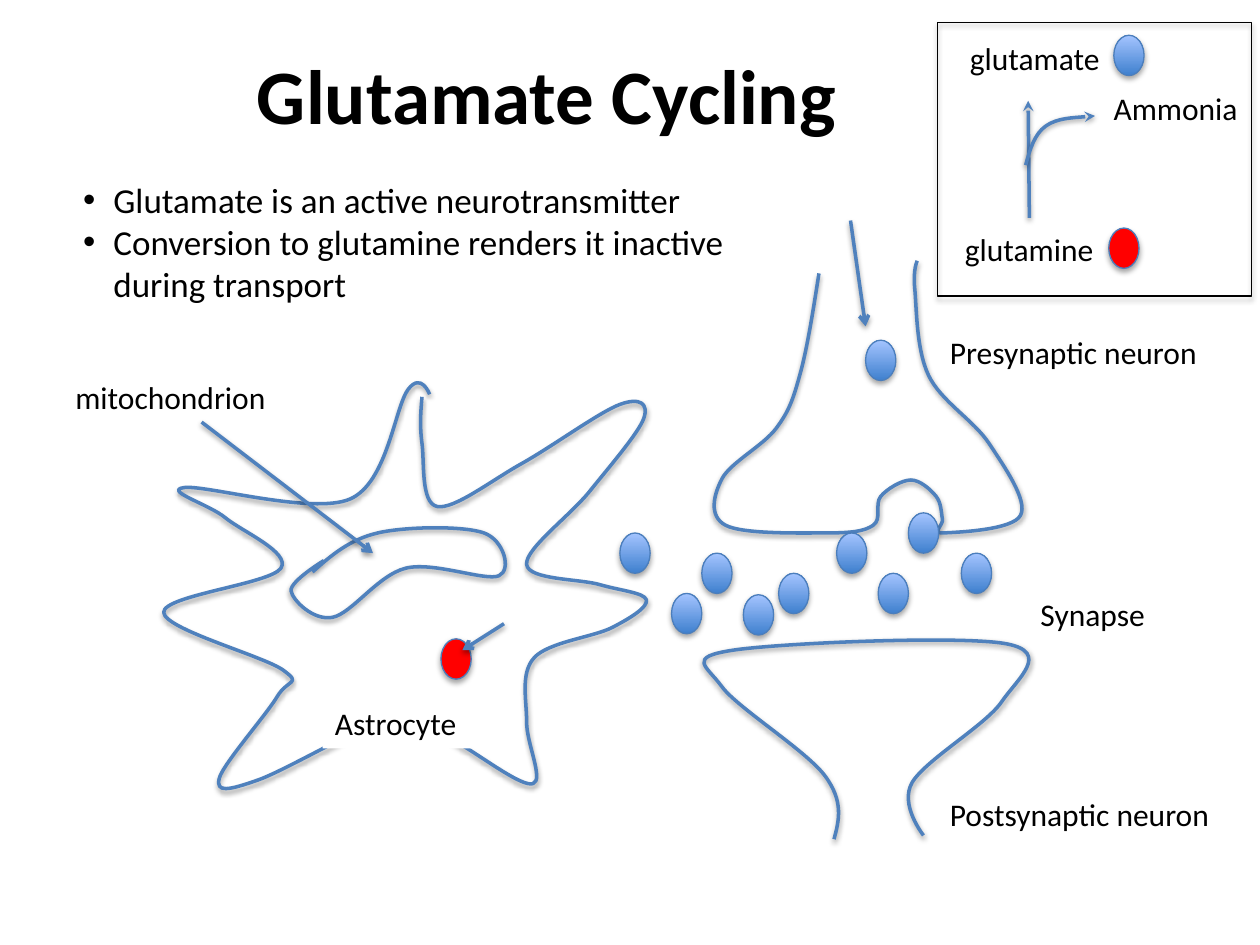
from lxml import etree
from pptx import Presentation
from pptx.dml.color import RGBColor
from pptx.enum.shapes import MSO_CONNECTOR as LINE, MSO_SHAPE as SHAPE
from pptx.enum.text import MSO_ANCHOR as ANCHOR, MSO_AUTO_SIZE as FIT, PP_ALIGN as ALIGN
from pptx.oxml.ns import qn
from pptx.util import Emu, Inches, Pt

# ---- Content ----
TITLE = "Glutamate Cycling"
BULLETS = [
    "Glutamate is an active neurotransmitter",
    "Conversion to glutamine renders it inactive during transport",
]
FONT, BLACK, OUTLINE, CELL_EDGE, RED = "Calibri", "000000", "4F81BD", "4B7EBC", "FF0000"
BLUES = ("3F80CE", "A4C4FF")
CELL_W, CELL_H, LABEL_H = 0.24, 0.32, 0.4

# Knots that each smooth outline passes through, in inches
ASTROCYTE = [
    (3.35, 3.15), (3.35, 3.52), (3.47, 4.02), (4.14, 3.68), (4.92, 3.21), (5.11, 3.32),
    (4.68, 3.9), (4.18, 4.48), (4.76, 4.64), (5.13, 4.76), (4.86, 4.98), (4.24, 5.22),
    (4.18, 5.73), (4.23, 6.22), (3.64, 5.9), (3.21, 5.66), (2.05, 6.19), (1.74, 6.18),
    (2.2, 5.53), (2.25, 5.32), (1.3, 4.86), (2.23, 4.51), (1.79, 4.11), (1.46, 3.87),
    (2.78, 3.96), (3.24, 3.09), (3.41, 3.13),
]
PRESYNAPTIC = [
    (6.5, 2.17), (6.35, 2.97), (6.16, 3.4), (5.73, 3.8), (5.76, 4.17), (6.56, 4.23),
    (6.93, 4.17), (6.99, 3.94), (7.23, 3.81), (7.43, 3.94), (7.48, 4.12), (7.49, 4.23),
    (8.1, 4.09), (7.85, 3.52), (7.37, 2.98), (7.26, 2.29), (7.28, 2.07),
]
POSTSYNAPTIC = [
    (6.62, 6.66), (6.55, 6.16), (5.73, 5.45), (5.82, 5.16), (7.99, 5.11),
    (7.95, 5.57), (7.24, 6.21), (7.33, 6.63),
]
MITOCHONDRION = [
    (2.48, 4.54), (3, 4.23), (3.84, 4.23), (3.96, 4.57), (3.22, 4.51),
    (2.64, 4.9), (2.31, 4.69), (2.57, 4.45),
]
AMMONIA_BRANCH = [(8.14, 1.31), (8.3, 1), (8.69, 0.92)]

# Left and top of each glutamate
GLUTAMATES = [
    (5.57, 4.39), (7.21, 4.07), (5.9, 4.72), (5.33, 4.71), (4.92, 4.23),
    (7.63, 4.39), (6.64, 4.23), (6.18, 4.55), (6.97, 4.55), (6.87, 2.7),
]
# Text, left, top, width
LABELS = [
    ("Synapse", 8.16, 4.67, 1.04),
    ("mitochondrion", 0.5, 2.95, 1.73),
    ("Presynaptic neuron", 7.44, 2.59, 2.18),
    ("Postsynaptic neuron", 7.44, 6.26, 2.28),
]
LEGEND_LABELS = [
    ("glutamate", 7.6, 0.26, 1.24),
    ("glutamine", 7.56, 1.78, 1.23),
    ("Ammonia", 8.74, 0.66, 1.2),
]
ARROWS = [((1.6, 3.35), (2.96, 4.39)), ((6.75, 1.75), (6.87, 2.59)), ((4, 4.95), (3.67, 5.16))]


# ---- Helpers ----
def rgb(value):
    return RGBColor.from_string(value)


def box(*lengths):
    return [Inches(v) for v in lengths]


def add_run(p, text, size, bold=False):
    r = p.add_run()
    r.text = text
    r.font.name, r.font.size, r.font.bold = FONT, Pt(size), bold
    r.font.color.rgb = rgb(BLACK)


def draw_line(sp, color, width, head=None):
    sp.line.color.rgb, sp.line.width = rgb(color), Pt(width)
    if head:
        etree.SubElement(sp.element.spPr.find(qn("a:ln")), qn("a:tailEnd"), type=head)


def add_shadow(sp, alpha, dist):
    effects = etree.SubElement(sp.element.spPr, qn("a:effectLst"))
    shadow = etree.SubElement(effects, qn("a:outerShdw"), blurRad=str(Pt(3.1)),
                              dist=str(Pt(dist)), dir="5400000", rotWithShape="0")
    color = etree.SubElement(shadow, qn("a:srgbClr"), val=BLACK)
    etree.SubElement(color, qn("a:alpha"), val=str(alpha * 1000))


def add_label(shapes, text, x, y, w, fill=None):
    sp = shapes.add_textbox(*box(x, y, w, LABEL_H))
    if fill:
        sp.fill.solid()
        sp.fill.fore_color.rgb = rgb(fill)
    sp.text_frame.word_wrap = False
    add_run(sp.text_frame.paragraphs[0], text, 18)


def add_cell(shapes, x, y, fill=None):
    sp = shapes.add_shape(SHAPE.OVAL, *box(x, y, CELL_W, CELL_H))
    if fill:
        sp.fill.solid()
        sp.fill.fore_color.rgb = rgb(fill)
    else:
        sp.fill.gradient()
        sp.fill.gradient_angle = 90
        for stop, color in zip(sp.fill.gradient_stops, BLUES):
            stop.color.rgb = rgb(color)
    draw_line(sp, CELL_EDGE, 0.75)
    add_shadow(sp, 35, 1.8)


def add_arrow(shapes, start, end, head="arrow"):
    sp = shapes.add_connector(LINE.STRAIGHT, *box(*start, *end))
    draw_line(sp, OUTLINE, 2, head)
    add_shadow(sp, 38, 1.6)


def spline(knots):
    """Bezier points after the first knot; tangents follow the neighbouring knots."""
    points, last = [], len(knots) - 1

    def handle(i, sign):
        return tuple(k + sign * (b - a) / 6
                     for a, k, b in zip(knots[i - 1], knots[i], knots[i + 1]))

    for i in range(last):
        c2 = handle(i + 1, -1) if i + 1 < last else knots[last]
        c1 = handle(i, 1) if i else tuple((a + b) / 2 for a, b in zip(knots[0], c2))
        points += [c1, c2, knots[i + 1]]
    return points


def add_curve(shapes, knots, head=None):
    builder = shapes.build_freeform(*box(*knots[0]), scale=1.0)
    builder.add_line_segments([box(*pt) for pt in spline(knots)], close=False)
    sp = builder.convert_to_shape(Emu(0), Emu(0))
    # Turn every three points into one cubic segment
    outline = sp.element.spPr.find(".//" + qn("a:path"))
    segments = outline.findall(qn("a:lnTo"))
    for i in range(0, len(segments), 3):
        cubic = etree.SubElement(outline, qn("a:cubicBezTo"))
        for segment in segments[i:i + 3]:
            cubic.append(segment[0])
            outline.remove(segment)
    sp.fill.background()
    draw_line(sp, OUTLINE, 2, head)
    add_shadow(sp, 38, 1.6)


def place(sp, x, y, w, h):
    sp.left, sp.top, sp.width, sp.height = box(x, y, w, h)
    sp.text_frame.auto_size = FIT.NONE
    return sp.text_frame


def main():
    prs = Presentation()
    prs.slide_width, prs.slide_height = box(10, 7.5)
    s = prs.slides.add_slide(prs.slide_layouts[1])
    shapes = s.shapes

    # Title and bullets
    tf = place(shapes.title, -0.16, 0.12, 9, 1.25)
    tf.vertical_anchor = ANCHOR.MIDDLE
    tf.paragraphs[0].alignment = ALIGN.CENTER
    add_run(tf.paragraphs[0], TITLE, 44, True)
    tf = place(s.placeholders[1], 0.56, 1.37, 5.34, 1.11)
    for i, text in enumerate(BULLETS):
        p = tf.add_paragraph() if i else tf.paragraphs[0]
        p.space_before = Pt(0)
        pPr = p._p.get_or_add_pPr()
        pPr.set("marL", str(Inches(0.24)))
        pPr.set("indent", str(-Inches(0.24)))
        etree.SubElement(pPr, qn("a:buFont"), typeface="Arial")
        etree.SubElement(pPr, qn("a:buChar"), char="•")
        add_run(p, text, 20)

    # Astrocyte, neurons and transmitters
    for knots in (ASTROCYTE, PRESYNAPTIC, POSTSYNAPTIC, MITOCHONDRION):
        add_curve(shapes, knots)
    for x, y in GLUTAMATES:
        add_cell(shapes, x, y)
    add_cell(shapes, 3.5, 5.07, RED)
    for start, end in ARROWS:
        add_arrow(shapes, start, end)
    for label in LABELS:
        add_label(shapes, *label)
    add_label(shapes, "Astrocyte", 2.56, 5.54, 1.18, "FFFFFF")

    # Legend
    legend = shapes.add_group_shape().shapes
    for label in LEGEND_LABELS:
        add_label(legend, *label)
    add_cell(legend, 8.84, 0.28)
    add_cell(legend, 8.8, 1.81, RED)
    add_arrow(legend, (8.17, 1.73), (8.16, 0.8), "stealth")
    add_curve(legend, AMMONIA_BRANCH, "stealth")
    frame = shapes.add_shape(SHAPE.RECTANGLE, *box(7.44, 0.18, 2.49, 2.17))
    frame.fill.background()
    draw_line(frame, BLACK, 0.75)
    add_shadow(frame, 35, 1.8)

    prs.save("out.pptx")


if __name__ == "__main__":
    main()
